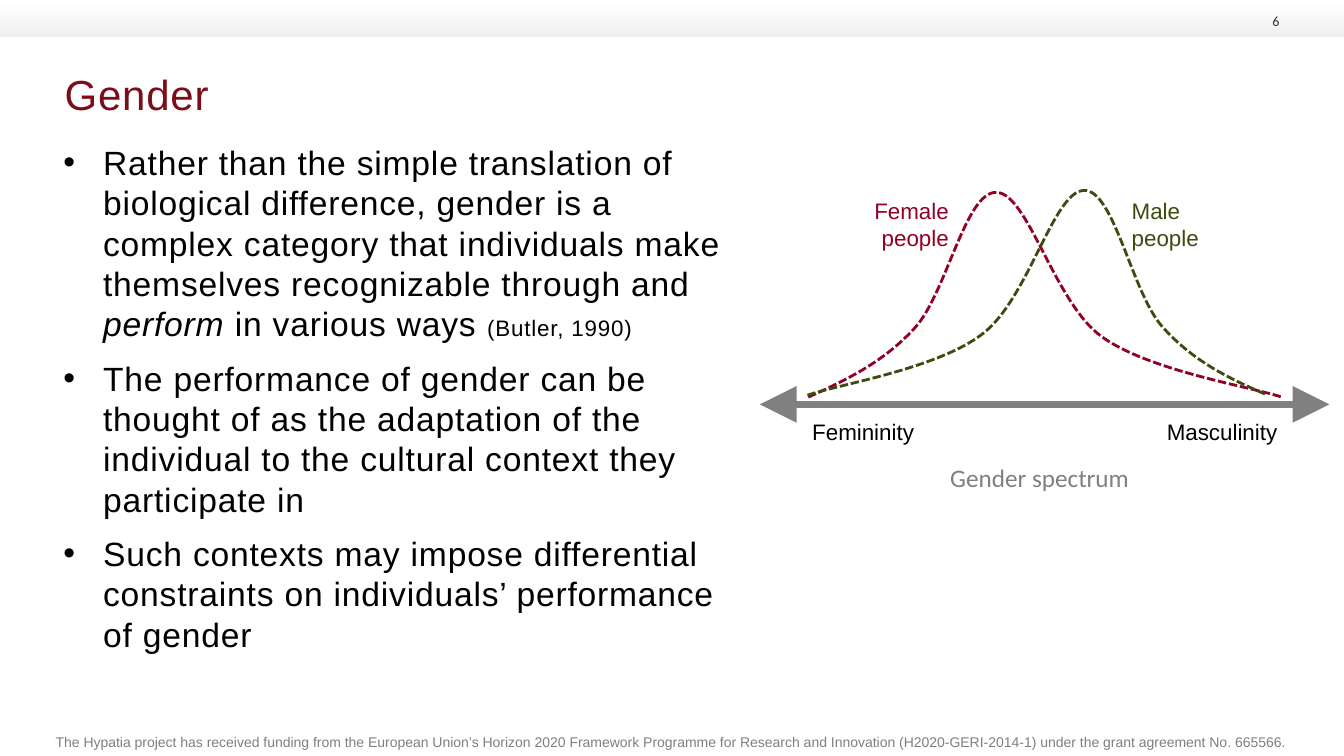
from lxml.etree import SubElement
from pptx import Presentation
from pptx.dml.color import RGBColor
from pptx.enum.dml import MSO_LINE
from pptx.enum.shapes import MSO_CONNECTOR, MSO_SHAPE
from pptx.enum.text import MSO_ANCHOR, PP_ALIGN
from pptx.oxml.ns import qn
from pptx.util import Cm, Pt

COLORS = {
    "title": "7C0C17", "text": "000000", "number": "333333", "footer": "7F7F7F",
    "axis": "808080", "female": "920026", "male": "3C4C11",
    "bar_top": "FFFFFF", "bar_bottom": "EFF0EF",
}
WIDTH, HEIGHT = 33.87, 19.05


def rgb(name):
    return RGBColor.from_string(COLORS[name])


class SlideBuilder:
    font = "Arial"
    inset = (0.25, 0.13)

    def __init__(self, slide):
        self.s = slide

    def bar(self, x, y, w, h, top, bottom):
        sp = self.s.shapes.add_shape(MSO_SHAPE.RECTANGLE, Cm(x), Cm(y), Cm(w), Cm(h))
        sp.shadow.inherit = False
        sp.line.fill.background()
        sp.fill.gradient()
        sp.fill.gradient_angle = 270
        for stop, color in zip(sp.fill.gradient_stops, (top, bottom)):
            stop.color.rgb = rgb(color)

    def box(self, x, y, w, h, inset=inset, anchor=MSO_ANCHOR.TOP):
        tf = self.s.shapes.add_textbox(Cm(x), Cm(y), Cm(w), Cm(h)).text_frame
        tf.word_wrap = True
        tf.vertical_anchor = anchor
        tf.margin_left = tf.margin_right = Cm(inset[0])
        tf.margin_top = tf.margin_bottom = Cm(inset[1])
        return tf

    def run(self, p, text, size, color, font=font, italic=False, spacing=0):
        r = p.add_run()
        r.text = text
        r.font.name = font
        r.font.size = Pt(size)
        r.font.italic = italic
        r.font.color.rgb = rgb(color)
        if spacing:
            r.font._element.set("spc", str(spacing))

    def text(self, x, y, w, h, text, size, color, align=PP_ALIGN.LEFT, font=font,
             inset=inset, anchor=MSO_ANCHOR.TOP, spacing=0):
        p = self.box(x, y, w, h, inset, anchor).paragraphs[0]
        p.alignment = align
        self.run(p, text, size, color, font, spacing=spacing)

    def bullets(self, x, y, w, h, items, color):
        tf = self.box(x, y, w, h, (0, 0))
        for i, runs in enumerate(items):
            p = tf.add_paragraph() if i else tf.paragraphs[0]
            pPr = p._p.get_or_add_pPr()
            pPr.set("marL", str(Cm(1)))
            pPr.set("indent", str(-Cm(1)))
            SubElement(pPr, qn("a:buFont")).set("typeface", self.font)
            SubElement(pPr, qn("a:buChar")).set("char", "•")
            p.space_before = Pt(10 if i else 0)
            for text, size, italic in runs:
                self.run(p, text, size, color, italic=italic, spacing=60)

    def curve(self, points, color):
        start, *rest = [(Cm(x), Cm(y)) for x, y in points]
        builder = self.s.shapes.build_freeform(*start)
        builder.add_line_segments(rest, close=False)
        sp = builder.convert_to_shape()
        sp.shadow.inherit = False
        sp.fill.background()
        sp.line.color.rgb = rgb(color)
        sp.line.width = Pt(2)
        sp.line.dash_style = MSO_LINE.SQUARE_DOT
        path = next(sp._element.iter(qn("a:path")))
        segments = path.findall(qn("a:lnTo"))
        for i in range(0, len(segments), 3):
            bezier = SubElement(path, qn("a:cubicBezTo"))
            for segment in segments[i:i + 3]:
                bezier.append(segment[0])
                path.remove(segment)

    def double_arrow(self, x1, x2, y, color, width):
        line = self.s.shapes.add_connector(
            MSO_CONNECTOR.STRAIGHT, Cm(x1), Cm(y), Cm(x2), Cm(y))
        line.line.color.rgb = rgb(color)
        line.line.width = Pt(width)
        spPr = line._element.spPr
        ln = spPr.find(qn("a:ln"))
        for end in ("a:headEnd", "a:tailEnd"):
            SubElement(ln, qn(end), type="triangle", w="lg", len="lg")
        SubElement(spPr, qn("a:effectLst"))


BULLETS = [
    [("Rather than the simple translation of biological difference, gender is a "
      "complex category that individuals make themselves recognizable through and ",
      24, False),
     ("perform", 24, True),
     (" in various ways ", 24, False),
     ("(Butler, 1990)", 16, False)],
    [("The performance of gender can be thought of as the adaptation of the "
      "individual to the cultural context they participate in", 24, False)],
    [("Such contexts may impose differential constraints on individuals’ "
      "performance of gender", 24, False)],
]
FOOTER = ("The Hypatia project has received funding from the European Union’s "
          "Horizon 2020 Framework Programme for Research and Innovation "
          "(H2020-GERI-2014-1) under the grant agreement No. 665566. ")
FEMALE_CURVE = [
    (20.37, 10.01),
    (21.31, 9.58), (22.25, 9.14), (23.04, 8.28),
    (23.85, 7.42), (24.33, 4.8), (25.12, 4.85),
    (25.91, 4.88), (26.57, 7.62), (27.76, 8.48),
    (28.96, 9.35), (31.55, 9.75), (32.31, 10.01),
]
MALE_CURVE = [
    (31.88, 9.93),
    (30.96, 9.53), (30.05, 9.09), (29.29, 8.23),
    (28.52, 7.37), (28.07, 4.75), (27.31, 4.8),
    (26.54, 4.83), (25.91, 7.57), (24.74, 8.43),
    (23.6, 9.3), (21.08, 9.7), (20.35, 9.96),
]


def main():
    prs = Presentation()
    prs.slide_width, prs.slide_height = Cm(WIDTH), Cm(HEIGHT)
    b = SlideBuilder(prs.slides.add_slide(prs.slide_layouts[6]))

    b.bar(0, 0, WIDTH, 0.93, "bar_top", "bar_bottom")
    b.text(1.63, 1.73, 14.45, 2.41, "Gender", 30, "title",
           inset=(0, 0), spacing=60)
    b.bullets(1.6, 3.58, 16.74, 12.98, BULLETS, "text")
    b.text(31.17, 0.25, 1.07, 0.48, "6", 10, "number", PP_ALIGN.RIGHT, "Calibri",
           inset=(0, 0), anchor=MSO_ANCHOR.BOTTOM)
    b.text(0, 18.36, WIDTH, 0.69, FOOTER, 10, "footer", PP_ALIGN.CENTER)

    b.text(21.77, 11.53, 8.86, 1.02, "Gender spectrum", 18, "axis",
           PP_ALIGN.CENTER, "Calibri")
    b.curve(FEMALE_CURVE, "female")
    b.curve(MALE_CURVE, "male")
    b.double_arrow(19.15, 33.5, 10.19, "axis", 5.25)
    b.text(20.22, 10.41, 3.33, 0.94, "Femininity", 16, "text")
    b.text(28.55, 10.41, 3.89, 0.94, "Masculinity", 16, "text", PP_ALIGN.RIGHT)
    b.text(20.83, 4.83, 3.33, 1.63, "Female people", 16, "female", PP_ALIGN.RIGHT)
    b.text(28.27, 4.85, 2.69, 1.63, "Male people", 16, "male")

    prs.save("out.pptx")


if __name__ == "__main__":
    main()
